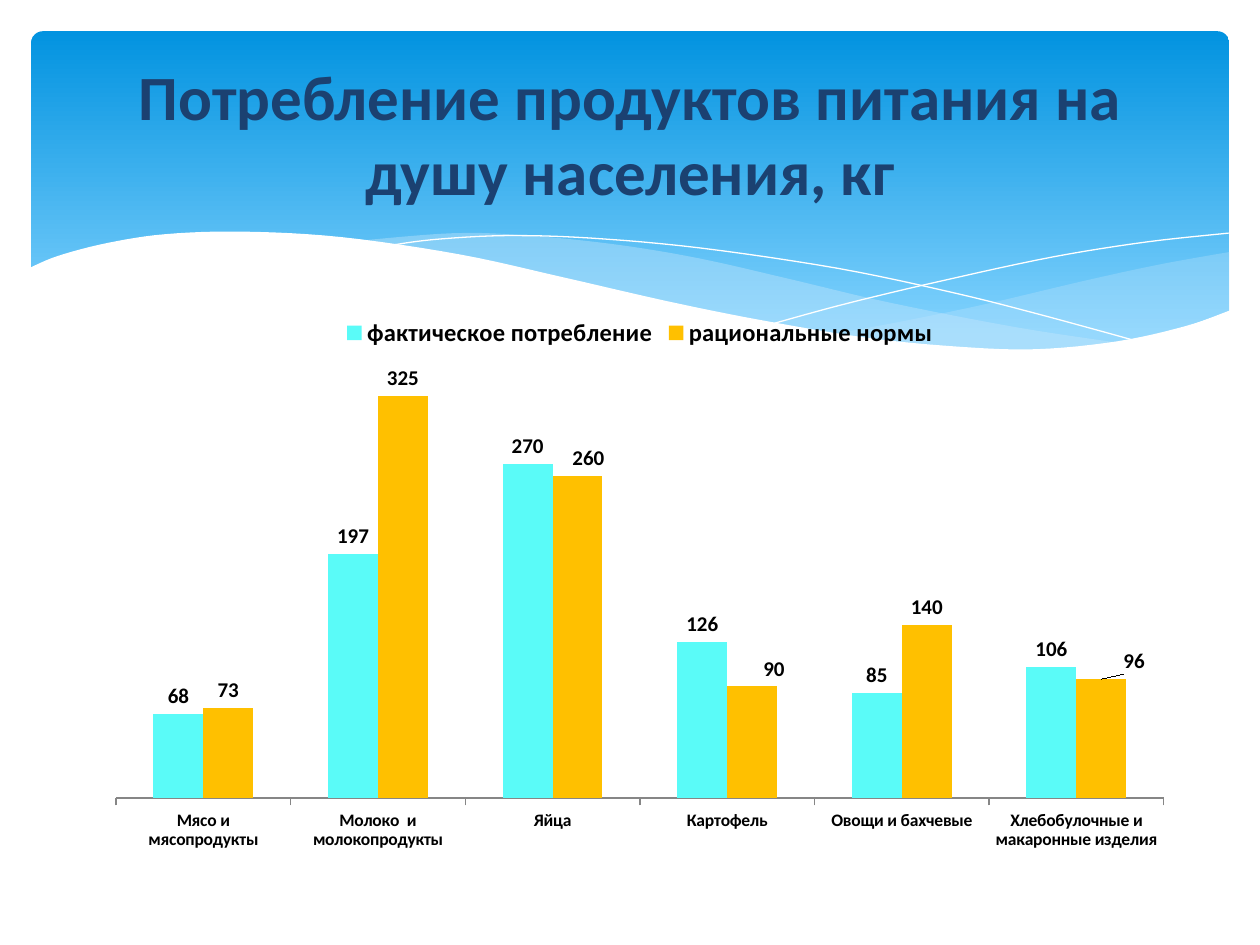
from lxml.etree import SubElement
from pptx import Presentation
from pptx.chart.data import CategoryChartData
from pptx.dml.color import RGBColor
from pptx.enum.chart import XL_CHART_TYPE, XL_LABEL_POSITION, XL_LEGEND_POSITION, XL_TICK_MARK
from pptx.enum.shapes import MSO_SHAPE
from pptx.enum.text import MSO_ANCHOR, PP_ALIGN
from pptx.oxml import parse_xml
from pptx.oxml.ns import nsdecls, qn
from pptx.util import Cm, Pt

FONT = "Calibri"
STEPS = 6

RIGHT_WAVE_TOP = [(24.79, 5.08), (23.39, 5.33), (21.87, 5.66), (19.79, 6.15),
                  (17.93, 6.53), (16.79, 6.73)]
RIGHT_WAVE_BOTTOM = [(16.79, 6.73), (18.26, 6.91), (19.53, 7.04), (20.68, 7.06),
                     (22.15, 6.96), (23.39, 6.73), (24.79, 6.27)]
MIDDLE_WAVE_TOP = [(22.68, 6.93), (20.5, 6.6), (17.93, 6.1), (15.98, 5.64), (14.1, 5.21),
                   (12.42, 4.93), (10.67, 4.75), (9.17, 4.7), (7.26, 4.85)]
MIDDLE_WAVE_BOTTOM = [(7.26, 4.85), (9.19, 5.16), (11.4, 5.64), (13.46, 6.1), (15.7, 6.55),
                      (17.65, 6.86), (19.33, 7.04), (20.78, 7.06), (21.77, 7.04), (22.68, 6.93)]
FALLING_LINE = [(7.85, 4.95), (8.74, 4.83), (10.19, 4.75), (11.91, 4.8), (14.12, 5),
                (16.89, 5.41), (19.3, 5.92), (21.11, 6.38), (23.04, 6.91)]
RISING_LINE = [(15.57, 6.53), (17.07, 6.12), (19, 5.66), (21.23, 5.18), (23.11, 4.88),
               (24.77, 4.7)]
WHITE_WAVE_TOP = [(0.58, 5.41), (1.17, 5.16), (2.16, 4.9), (3.35, 4.72), (4.9, 4.67),
                  (6.88, 4.78), (9.27, 5.13), (11.35, 5.59), (13.44, 6.07), (15.32, 6.45),
                  (17.48, 6.81), (19.33, 6.99), (20.9, 7.04), (22.53, 6.88), (23.88, 6.58),
                  (24.82, 6.25)]
WHITE_WAVE_BASE = [(24.82, 8.36), (0.58, 8.36)]

CATEGORIES = ["Мясо и мясопродукты", "Молоко  и молокопродукты", "Яйца", "Картофель",
              "Овощи и бахчевые", "Хлебобулочные и макаронные изделия"]
SERIES = [("фактическое потребление", [68, 197, 270, 126, 85, 106], "5AFBF8"),
          ("рациональные нормы", [73, 325, 260, 90, 140, 96], "FFC000")]
NORM_LABEL_SHIFTS = {2: 0.01, 3: 0.02, 5: 0.03}


def color(value):
    return RGBColor.from_string(value)


def style_font(font, size, value="000000"):
    font.name = FONT
    font.size = Pt(size)
    font.bold = True
    font.color.rgb = color(value)


def smooth(points):
    padded = [points[0], *points, points[-1]]
    curve = [points[0]]
    for before, start, end, after in zip(padded, padded[1:], padded[2:], padded[3:]):
        for step in range(1, STEPS + 1):
            t = step / STEPS
            curve.append(tuple(
                (2 * b + (c - a) * t + (2 * a - 5 * b + 4 * c - d) * t ** 2
                 + (3 * b - a - 3 * c + d) * t ** 3) / 2
                for a, b, c, d in zip(before, start, end, after)))
    return curve


def add_outline(slide, points, close):
    start, *rest = [(Cm(x), Cm(y)) for x, y in points]
    builder = slide.shapes.build_freeform(*start)
    builder.add_line_segments(rest, close=close)
    shape = builder.convert_to_shape()
    shape.shadow.inherit = False
    return shape


def add_wave(slide, points, fill, opacity=100):
    shape = add_outline(slide, points, True)
    shape.fill.solid()
    shape.fill.fore_color.rgb = color(fill)
    shape.line.fill.background()
    if opacity < 100:
        fill_color = shape.fill._xPr.find(qn("a:solidFill"))[0]
        SubElement(fill_color, qn("a:alpha")).set("val", str(opacity * 1000))


def add_curve(slide, points):
    shape = add_outline(slide, smooth(points), False)
    shape.fill.background()
    shape.line.color.rgb = color("FFFFFF")
    shape.line.width = Pt(0)


def add_banner(slide):
    shape = slide.shapes.add_shape(MSO_SHAPE.ROUNDED_RECTANGLE,
                                   Cm(0.63), Cm(0.63), Cm(24.15), Cm(6.86))
    shape.adjustments[0] = 0.034
    shape.shadow.inherit = False
    shape.line.fill.background()
    shape.fill.gradient()
    shape.fill.gradient_angle = 270
    stops = [(0, "0293E0"), (0.9, "83D3FE")]
    for stop, (position, value) in zip(shape.fill.gradient_stops, stops):
        stop.position = position
        stop.color.rgb = color(value)


def add_title(slide, text):
    box = slide.shapes.add_textbox(Cm(1.27), Cm(0.94), Cm(22.86), Cm(3.48))
    frame = box.text_frame
    frame.word_wrap = True
    frame.vertical_anchor = MSO_ANCHOR.MIDDLE
    paragraph = frame.paragraphs[0]
    paragraph.alignment = PP_ALIGN.CENTER
    run = paragraph.add_run()
    run.text = text
    style_font(run.font, 36, "1B4171")


def manual_layout(target="", **values):
    inner = f'<c:layoutTarget val="{target}"/>' if target else ""
    if target:
        inner += '<c:xMode val="edge"/><c:yMode val="edge"/>'
    inner += "".join(f'<c:{name} val="{value}"/>' for name, value in values.items())
    return parse_xml(f'<c:layout {nsdecls("c")}><c:manualLayout>{inner}'
                     '</c:manualLayout></c:layout>')


def style_series(series, fill):
    series.format.fill.solid()
    series.format.fill.fore_color.rgb = color(fill)
    labels = series.data_labels
    labels.show_value = True
    labels.position = XL_LABEL_POSITION.OUTSIDE_END
    style_font(labels.font, 12)


def shift_label(series, index, shift):
    label = series.points[index].data_label
    style_font(label.font, 12)
    label.position = XL_LABEL_POSITION.OUTSIDE_END
    label._dLbl.insert(1, manual_layout(x=shift, y=0))


def style_axes(chart):
    chart.value_axis.visible = False
    chart.value_axis.has_major_gridlines = False
    chart.value_axis.minimum_scale = 0
    chart.value_axis.maximum_scale = 350
    axis = chart.category_axis
    axis.major_tick_mark = XL_TICK_MARK.OUTSIDE
    axis.format.line.color.rgb = color("868686")
    style_font(axis.tick_labels.font, 10)


def add_consumption_chart(slide):
    data = CategoryChartData()
    data.categories = CATEGORIES
    for name, values, _ in SERIES:
        data.add_series(name, values)
    chart = slide.shapes.add_chart(XL_CHART_TYPE.COLUMN_CLUSTERED, Cm(1.9), Cm(6.12),
                                   Cm(22), Cm(11.2), data).chart
    chart.has_title = False
    chart.font.name = FONT
    chart.font.size = Pt(10)
    chart.font.color.rgb = color("000000")
    chart.has_legend = True
    chart.legend.position = XL_LEGEND_POSITION.TOP
    chart.legend.include_in_layout = False
    style_font(chart.legend.font, 14)
    style_axes(chart)
    plot = chart.plots[0]
    plot.gap_width = 150
    plot.overlap = 0
    plot.vary_by_categories = False
    for series, (_, _, fill) in zip(plot.series, SERIES):
        style_series(series, fill)
    for index, shift in NORM_LABEL_SHIFTS.items():
        shift_label(plot.series[1], index, shift)
    area = chart._chartSpace.chart.plotArea
    for layout in area.findall(qn("c:layout")):
        area.remove(layout)
    area.insert(0, manual_layout("inner", x=0.02, y=0.11, w=0.96, h=0.78))


def main():
    presentation = Presentation()
    presentation.slide_width = Cm(25.4)
    presentation.slide_height = Cm(19.05)
    slide = presentation.slides.add_slide(presentation.slide_layouts[6])
    add_banner(slide)
    add_wave(slide, smooth(RIGHT_WAVE_TOP) + smooth(RIGHT_WAVE_BOTTOM), "C6E7FC", 29)
    add_wave(slide, smooth(MIDDLE_WAVE_TOP) + smooth(MIDDLE_WAVE_BOTTOM), "C6E7FC", 40)
    add_curve(slide, FALLING_LINE)
    add_curve(slide, RISING_LINE)
    add_wave(slide, smooth(WHITE_WAVE_TOP) + WHITE_WAVE_BASE, "FFFFFF")
    add_title(slide, "Потребление продуктов питания на душу населения, кг")
    add_consumption_chart(slide)
    presentation.save("out.pptx")


if __name__ == "__main__":
    main()
